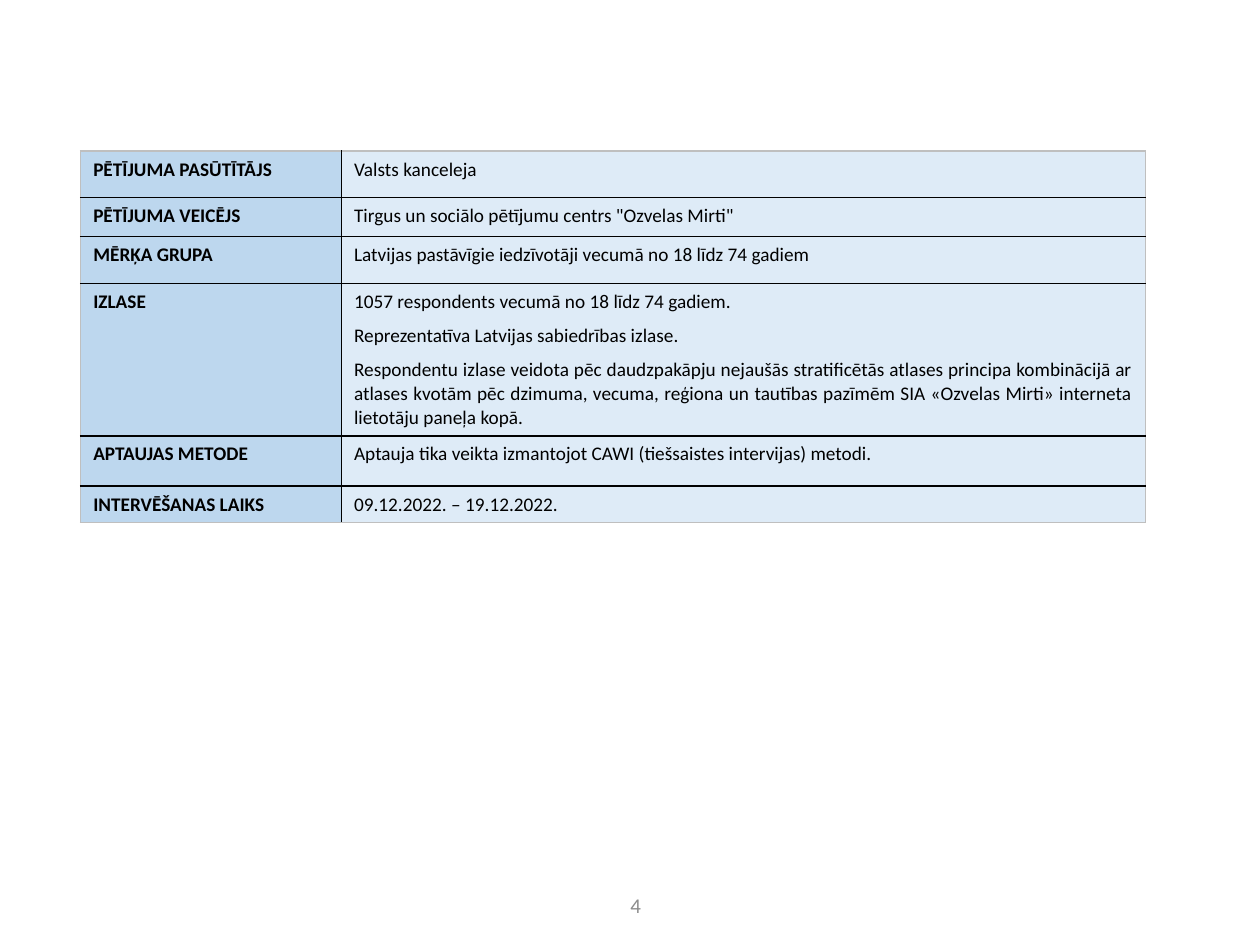
from lxml.etree import SubElement
from pptx import Presentation
from pptx.dml.color import RGBColor
from pptx.enum.text import MSO_ANCHOR as Anchor, PP_ALIGN as Align
from pptx.oxml.ns import qn
from pptx.util import Inches, Pt

FONT = "Calibri"
COLORS = {
    "label": "BDD7EE",
    "detail": "DEEBF7",
    "text": "000000",
    "rule": "000000",
    "frame": "BFBFBF",
    "number": "8C8C8C",
}
COLUMN_WIDTHS = [2.07, 6.38]
# Label, paragraphs of detail, row height, width of the rule below
ROWS = [
    ("PĒTĪJUMA PASŪTĪTĀJS", ["Valsts kanceleja"], 0.37, 0.75),
    ("PĒTĪJUMA VEICĒJS", ['Tirgus un sociālo pētījumu centrs "Ozvelas Mirti"'], 0.31, 0.75),
    ("MĒRĶA GRUPA", ["Latvijas pastāvīgie iedzīvotāji vecumā no 18 līdz 74 gadiem"], 0.37, 1),
    ("IZLASE", [
        "1057 respondents vecumā no 18 līdz 74 gadiem.",
        "Reprezentatīva Latvijas sabiedrības izlase.",
        "Respondentu izlase veidota pēc daudzpakāpju nejaušās stratificētās atlases "
        "principa kombinācijā ar atlases kvotām pēc dzimuma, vecuma, reģiona un tautības "
        "pazīmēm SIA «Ozvelas Mirti» interneta lietotāju paneļa kopā.",
    ], 1.21, 1),
    ("APTAUJAS METODE",
     ["Aptauja tika veikta izmantojot CAWI (tiešsaistes intervijas) metodi."], 0.4, 1),
    ("INTERVĒŠANAS LAIKS", ["09.12.2022. – 19.12.2022."], 0.29, 1),
]


def rgb(name):
    return RGBColor.from_string(COLORS[name])


def style_para(para, size, color, bold=False, align=Align.LEFT):
    para.alignment = align
    for span in para.runs:
        span.font.name = FONT
        span.font.size = Pt(size)
        span.font.bold = bold
        span.font.color.rgb = rgb(color)


def set_borders(cell, borders):
    """Draw (side, color, width) borders, given in the order L, R, T, B."""
    properties = cell._tc.get_or_add_tcPr()
    for position, (side, color, width) in enumerate(borders):
        line = SubElement(properties, qn(f"a:ln{side}"), w=str(Pt(width)))
        fill = SubElement(line, qn("a:solidFill"))
        SubElement(fill, qn("a:srgbClr"), val=COLORS[color])
        properties.insert(position, line)


def fill_cell(cell, paragraphs, color, bold, align):
    cell.fill.solid()
    cell.fill.fore_color.rgb = rgb(color)
    cell.text_frame.text = "\n".join(paragraphs)
    for index, para in enumerate(cell.text_frame.paragraphs):
        style_para(para, 11, "text", bold, align)
        if index:
            para.space_before = Pt(6)


def add_survey_table(page):
    heights = [row[2] for row in ROWS]
    table = page.shapes.add_table(
        len(ROWS), 2, Inches(0.64), Inches(1.2),
        Inches(sum(COLUMN_WIDTHS)), Inches(sum(heights))).table
    table.first_row = table.horz_banding = False
    for column, width in zip(table.columns, COLUMN_WIDTHS):
        column.width = Inches(width)

    above = ("frame", 1)
    for index, (label, details, height, rule) in enumerate(ROWS):
        table.rows[index].height = Inches(height)
        last = index == len(ROWS) - 1
        below = ("frame" if last else "rule", rule)
        label_cell, detail_cell = table.cell(index, 0), table.cell(index, 1)
        fill_cell(label_cell, [label], "label", True, Align.LEFT)
        fill_cell(detail_cell, details, "detail", False,
                  Align.LEFT if last else Align.JUSTIFY)
        for cell, left, right in ((label_cell, "frame", "rule"),
                                  (detail_cell, "rule", "frame")):
            set_borders(cell, [("L", left, 1), ("R", right, 1),
                               ("T", *above), ("B", *below)])
        above = below


def add_page_number(page, number):
    box = page.shapes.add_textbox(Inches(4.77), Inches(7.04), Inches(0.55), Inches(0.28))
    frame = box.text_frame
    frame.word_wrap = True
    frame.vertical_anchor = Anchor.MIDDLE
    frame.text = str(number)
    style_para(frame.paragraphs[0], 12, "number", align=Align.CENTER)


def main():
    deck = Presentation()
    deck.slide_width, deck.slide_height = Inches(10), Inches(7.5)
    page = deck.slides.add_slide(deck.slide_layouts[6])
    add_page_number(page, 4)
    add_survey_table(page)
    deck.save("out.pptx")


if __name__ == "__main__":
    main()
